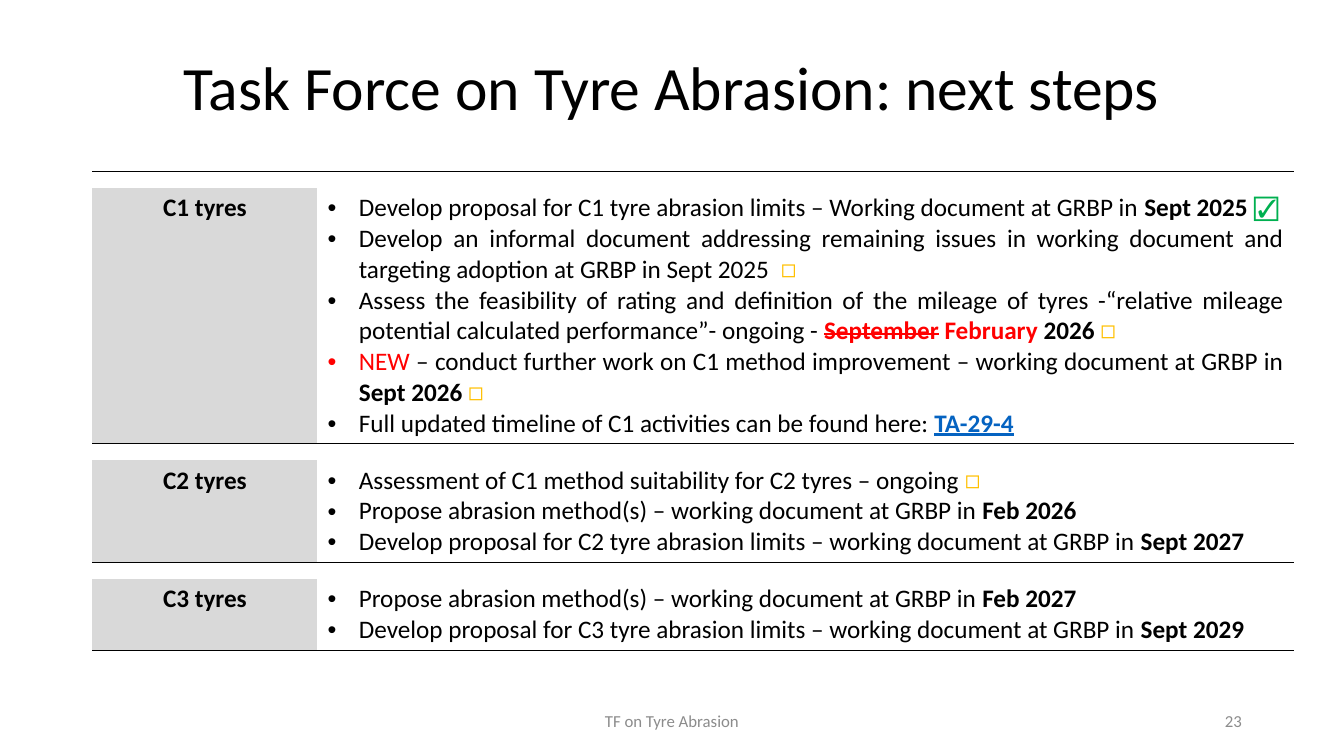
from lxml import etree
from pptx import Presentation
from pptx.dml.color import RGBColor
from pptx.enum.text import MSO_ANCHOR, PP_ALIGN
from pptx.oxml.ns import qn
from pptx.util import Cm, Pt

LEFT, CENTER, RIGHT = PP_ALIGN.LEFT, PP_ALIGN.CENTER, PP_ALIGN.RIGHT
JUSTIFY, MIDDLE = PP_ALIGN.JUSTIFY, MSO_ANCHOR.MIDDLE

# Content: each bullet is a list of (text, style) spans
STYLES = {
    "plain": {"color": "000000"},
    "bold": {"color": "000000", "bold": True},
    "done": {"color": "00B050"},
    "open": {"color": "FFC000"},
    "new": {"color": "FF0000"},
    "moved": {"color": "FF0000", "bold": True},
    "dropped": {"color": "FF0000", "bold": True, "strike": True},
    "reference": {"color": "0563C1", "bold": True, "underline": True},
}
TODO = ("◻", "open")

# Tyre class, number of text lines, bullets
STEPS = [
    ("C1 tyres", 8, [
        [("Develop proposal for C1 tyre abrasion limits – Working document at GRBP in ", "plain"),
         ("Sept 2025 ", "bold"), ("☑", "done")],
        [("Develop an informal document addressing remaining issues in working document "
          "and targeting adoption at GRBP in Sept 2025  ", "plain"), TODO],
        [("Assess the feasibility of rating and definition of the mileage of tyres "
          "-“relative mileage potential calculated performance”- ongoing - ", "plain"),
         ("September", "dropped"), (" ", "bold"), ("February", "moved"),
         (" 2026 ", "bold"), TODO],
        [("NEW", "new"),
         (" – conduct further work on C1 method improvement – working document at GRBP in ", "plain"),
         ("Sept 2026 ", "bold"), TODO],
        [("Full updated timeline of C1 activities can be found here: ", "plain"),
         ("TA-29-4", "reference")],
    ]),
    ("C2 tyres", 3, [
        [("Assessment of C1 method suitability for C2 tyres – ongoing ", "plain"), TODO],
        [("Propose abrasion method(s) – working document at GRBP in ", "plain"),
         ("Feb 2026", "bold")],
        [("Develop proposal for C2 tyre abrasion limits – working document at GRBP in ", "plain"),
         ("Sept 2027", "bold")],
    ]),
    ("C3 tyres", 2, [
        [("Propose abrasion method(s) – working document at GRBP in ", "plain"),
         ("Feb 2027", "bold")],
        [("Develop proposal for C3 tyre abrasion limits – working document at GRBP in ", "plain"),
         ("Sept 2029", "bold")],
    ]),
]

# Text, left, top, width, height, size, colour, alignment, line spacing (cm, pt)
TEXTS = [
    ("Task Force on Tyre Abrasion: next steps", 2.33, 1.01, 29.21, 2.56, 44, "000000", CENTER, 0.9),
    ("TF on Tyre Abrasion", 11.22, 17.65, 11.43, 1.01, 12, "8C8C8C", CENTER, 1),
    ("23", 23.93, 17.65, 7.62, 1.01, 12, "8C8C8C", RIGHT, 1),
]

TABLE_LEFT, TABLE_TOP = 2.33, 4.32
COLUMNS = [5.67, 24.61]
GAP, LINE, PADDING = 0.41, 0.77, 0.25
INDENT = 0.79
NO_STYLE = "{2D5ABB26-0587-4C30-8999-92F81FD0307C}"


def rgb(value):
    return RGBColor.from_string(value)


def add_span(para, text, size, color, strike=False, **formats):
    span = para.add_run()
    span.text = text
    span.font.color.rgb = rgb(color)
    for name, value in {"name": "Calibri", "size": Pt(size), **formats}.items():
        setattr(span.font, name, value)
    if strike:
        span.font._element.set("strike", "sngStrike")


def add_bullet(para):
    props = para._p.get_or_add_pPr()
    props.set("marL", str(Cm(INDENT)))
    props.set("indent", str(-Cm(INDENT)))
    etree.SubElement(props, qn("a:buFont")).set("typeface", "Arial")
    etree.SubElement(props, qn("a:buChar")).set("char", "•")


def add_border(cell, side):
    line = etree.Element(qn("a:" + side), w=str(Pt(1)))
    fill = etree.SubElement(line, qn("a:solidFill"))
    etree.SubElement(fill, qn("a:srgbClr"), val="000000")
    cell._tc.get_or_add_tcPr().insert(0, line)


def add_text(page, text, left, top, width, height, size, color, align, spacing):
    box = page.shapes.add_textbox(Cm(left), Cm(top), Cm(width), Cm(height))
    frame = box.text_frame
    frame.word_wrap = True
    frame.vertical_anchor = MIDDLE
    para = frame.paragraphs[0]
    para.alignment = align
    para.line_spacing = spacing
    add_span(para, text, size, color)


def add_steps(page):
    # Every class has a thin spacer row and a row of text
    heights = [h for _, lines, _ in STEPS for h in (GAP, lines * LINE + PADDING)]
    frame = page.shapes.add_table(len(heights), len(COLUMNS), Cm(TABLE_LEFT), Cm(TABLE_TOP),
                                  Cm(sum(COLUMNS)), Cm(sum(heights)))
    table = frame.table
    table.first_row = table.horz_banding = False
    table._tbl.tblPr.find(qn("a:tableStyleId")).text = NO_STYLE
    for column, width in zip(table.columns, COLUMNS):
        column.width = Cm(width)
    for row, height in zip(table.rows, heights):
        row.height = Cm(height)
    for cell in table.iter_cells():
        cell.fill.background()

    for index, (tyre_class, _, bullets) in enumerate(STEPS):
        # Spacer row
        for cell in table.rows[2 * index].cells:
            cell.margin_top = cell.margin_bottom = 0
            end = etree.SubElement(cell.text_frame.paragraphs[0]._p, qn("a:endParaRPr"))
            end.set("sz", "400")
            if index == 0:
                add_border(cell, "lnT")

        # Class label and its bullets
        label, actions = table.rows[2 * index + 1].cells
        label.fill.solid()
        label.fill.fore_color.rgb = rgb("D9D9D9")
        para = label.text_frame.paragraphs[0]
        para.alignment = CENTER
        add_span(para, tyre_class, 18, **STYLES["bold"])
        for number, spans in enumerate(bullets):
            body = actions.text_frame
            para = body.add_paragraph() if number else body.paragraphs[0]
            para.alignment = JUSTIFY if index == 0 and number else LEFT
            add_bullet(para)
            for text, style in spans:
                add_span(para, text, 18, **STYLES[style])
        for cell in (label, actions):
            add_border(cell, "lnB")


def main():
    deck = Presentation()
    deck.slide_width, deck.slide_height = Cm(33.87), Cm(19.05)
    page = deck.slides.add_slide(deck.slide_layouts[6])
    add_steps(page)
    for entry in TEXTS:
        add_text(page, *entry)
    deck.save("out.pptx")


if __name__ == "__main__":
    main()
